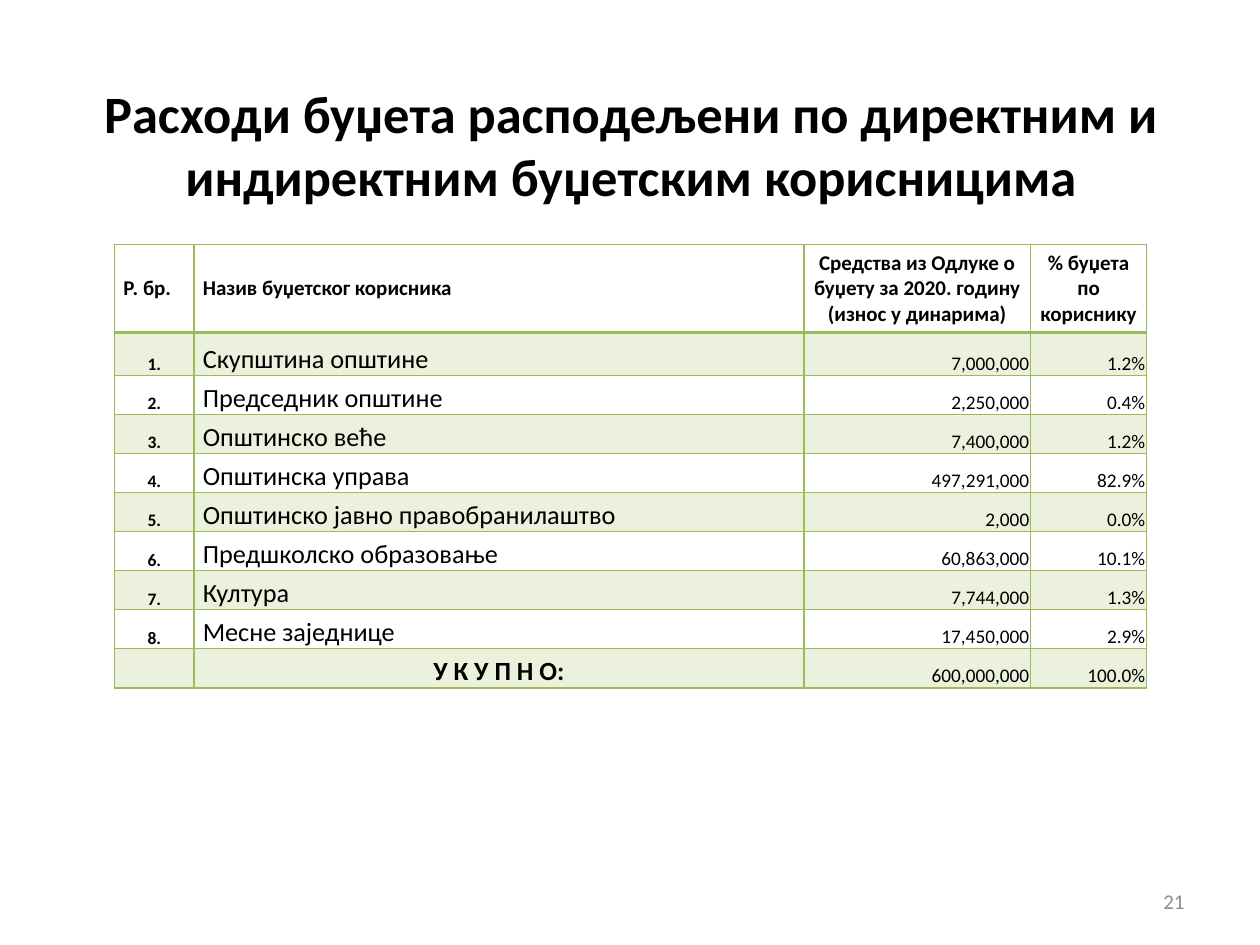
from lxml.etree import SubElement
from pptx import Presentation
from pptx.dml.color import RGBColor
from pptx.enum.text import MSO_ANCHOR as Anchor, PP_ALIGN as Align
from pptx.oxml import parse_xml
from pptx.oxml.ns import nsdecls, qn
from pptx.util import Inches, Pt

BLACK = RGBColor(0, 0, 0)
GRAY = RGBColor(0x8C, 0x8C, 0x8C)
GREEN = RGBColor(0x9B, 0xBB, 0x59)

TITLE = "Расходи буџета расподељени по директним и индиректним буџетским корисницима"
PAGE = "21"
HEADER = ["Р. бр.", "Назив буџетског корисника",
          "Средства из Одлуке о буџету за 2020. годину (износ у динарима)",
          "% буџета по кориснику"]
USERS = [
    ("Скупштина општине", "7,000,000", "1.2%"),
    ("Председник општине", "2,250,000", "0.4%"),
    ("Општинско веће", "7,400,000", "1.2%"),
    ("Општинска управа", "497,291,000", "82.9%"),
    ("Општинско јавно правобранилаштво", "2,000", "0.0%"),
    ("Предшколско образовање", "60,863,000", "10.1%"),
    ("Култура", "7,744,000", "1.3%"),
    ("Месне заједнице", "17,450,000", "2.9%"),
]
TOTAL = ("", "У К У П Н О:", "600,000,000", "100.0%")

COL_WIDTHS = [0.63, 4.84, 1.8, 0.92]
ROW_HEIGHTS = [0.7, 0.34] + [0.31] * len(USERS)
HEADER_ALIGN = [Align.LEFT, Align.LEFT, Align.CENTER, Align.CENTER]
# size, bold and alignment of each body column
BODY_FORMAT = [(10, True, Align.CENTER), (15, False, Align.LEFT),
               (11, False, Align.RIGHT), (11, False, Align.RIGHT)]


def write(tf, text, size, bold=False, color=BLACK, align=Align.LEFT):
    tf.word_wrap = True
    p = tf.paragraphs[0]
    p.alignment = align
    r = p.add_run()
    r.text = text
    r.font.name, r.font.size, r.font.bold = "Calibri", Pt(size), bold
    r.font.color.rgb = color


def place(sp, left, top, width, height):
    sp.left, sp.top, sp.width, sp.height = map(Inches, (left, top, width, height))


def set_borders(cell, **widths):
    """Draw green borders; widths in points are keyed L, R, T, B."""
    tc_pr = cell._tc.get_or_add_tcPr()
    for i, side in enumerate("LRTB"):
        tc_pr.insert(i, parse_xml(
            f'<a:ln{side} {nsdecls("a")} w="{Pt(widths.get(side, 1))}"><a:solidFill>'
            f'<a:srgbClr val="{GREEN}"/></a:solidFill></a:ln{side}>'))


def set_fill(cell, tinted):
    if not tinted:
        cell.fill.background()
        return
    cell.fill.solid()
    cell.fill.fore_color.rgb = GREEN
    color = cell._tc.tcPr.find(qn("a:solidFill"))[0]
    SubElement(color, qn("a:alpha")).set("val", "20000")


def fill_table(table):
    table.first_row = table.horz_banding = False
    for col, width in zip(table.columns, COL_WIDTHS):
        col.width = Inches(width)
    for row, height in zip(table.rows, ROW_HEIGHTS):
        row.height = Inches(height)

    body = [(f"{n}.", *user) for n, user in enumerate(USERS, 1)] + [TOTAL]
    for i, texts in enumerate([HEADER] + body):
        for j, text in enumerate(texts):
            cell = table.cell(i, j)
            is_number = i > 0 and j > 1
            cell.margin_left = cell.margin_right = Inches(0.01 if is_number else 0.07)
            cell.margin_top = Inches(0.01 if is_number else 0)
            cell.margin_bottom = 0
            cell.vertical_anchor = Anchor.BOTTOM if i else Anchor.MIDDLE
            size, bold, align = BODY_FORMAT[j] if i else (12, True, HEADER_ALIGN[j])
            if texts is TOTAL and j == 1:
                bold, align = True, Align.CENTER
            write(cell.text_frame, text, size, bold=bold, align=align)
            set_fill(cell, tinted=i % 2 == 1)
            set_borders(cell, T=2 if i == 1 else 1, B=1 if i else 2)


def main():
    prs = Presentation()
    prs.slide_width, prs.slide_height = Inches(10), Inches(7.5)
    s = prs.slides.add_slide(prs.slide_layouts[5])

    title = s.shapes.title
    place(title, 0.51, 0.52, 9, 1.25)
    title.text_frame.vertical_anchor = Anchor.MIDDLE
    write(title.text_frame, TITLE, 30, bold=True, align=Align.CENTER)

    frame = s.shapes.add_table(len(ROW_HEIGHTS), len(COL_WIDTHS), Inches(0.91),
                               Inches(1.94), Inches(sum(COL_WIDTHS)),
                               Inches(sum(ROW_HEIGHTS)))
    fill_table(frame.table)

    number = s.shapes.add_textbox(0, 0, 0, 0)
    place(number, 7.17, 6.95, 2.33, 0.4)
    number.text_frame.vertical_anchor = Anchor.MIDDLE
    write(number.text_frame, PAGE, 12, color=GRAY, align=Align.RIGHT)

    prs.save("out.pptx")


if __name__ == "__main__":
    main()
